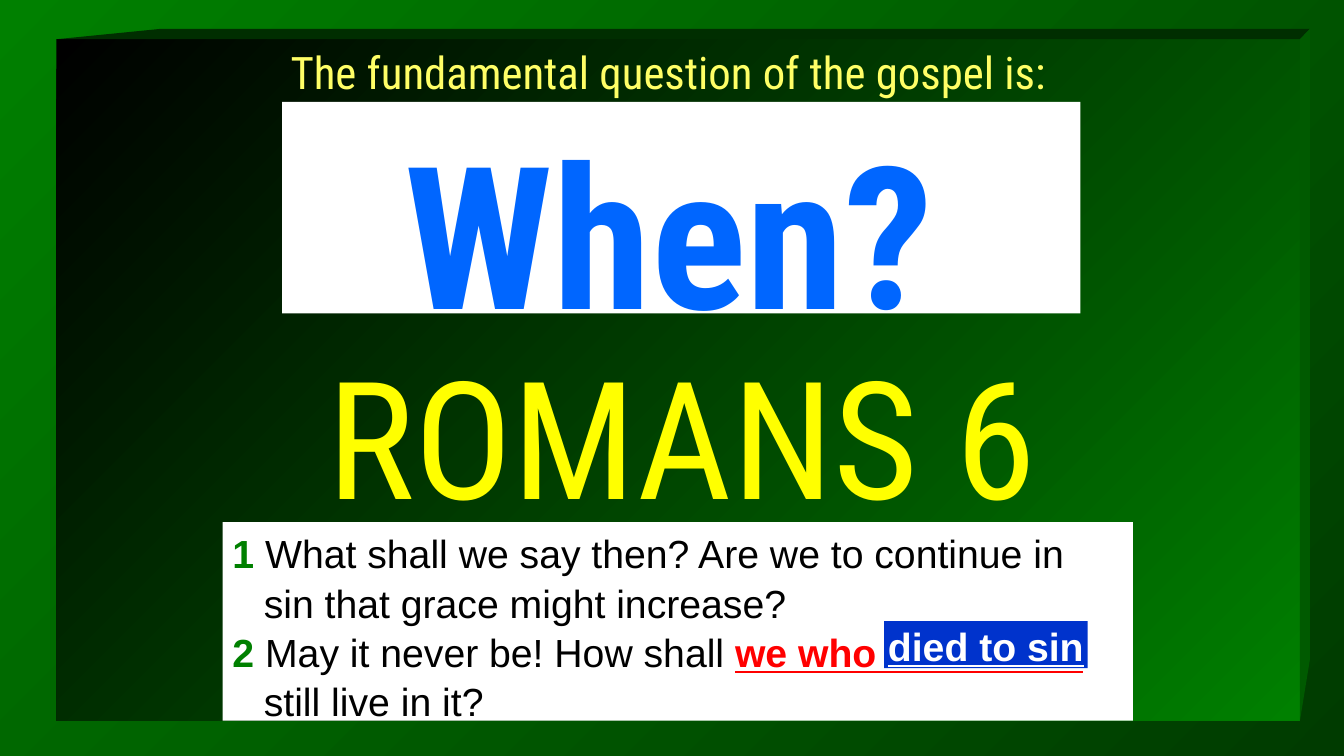
from pptx import Presentation
from pptx.dml.color import RGBColor
from pptx.enum.shapes import MSO_SHAPE
from pptx.enum.text import MSO_ANCHOR, MSO_AUTO_SIZE, PP_ALIGN
from pptx.util import Cm, Pt

COLORS = {
    "green": "008000", "dark green": "003B00", "black": "000000",
    "bevel top": "002E00", "bevel right": "005A00", "white": "FFFFFF",
    "pale yellow": "FFFF66", "yellow": "FFFF00", "blue": "0066FF",
    "deep blue": "0033CC", "red": "FF0000",
}
HEADING_FONT = "Roboto Condensed"
BODY_FONT = "Arial"
HANGING_INDENT = Cm(0.79)


def color(name):
    """Return the named colour."""
    return RGBColor.from_string(COLORS[name])


def fill_gradient(fill, start, end):
    """Apply a gradient running from top left to bottom right."""
    fill.gradient()
    fill.gradient_angle = 315
    for stop, name in zip(fill.gradient_stops, (start, end)):
        stop.color.rgb = color(name)


def fill_plain(shape, name):
    """Give a shape a solid fill without line or shadow."""
    shape.shadow.inherit = False
    shape.line.fill.background()
    shape.fill.solid()
    shape.fill.fore_color.rgb = color(name)


def add_box(slide, name, left, top, width, height):
    """Add a plain filled rectangle, measured in centimetres."""
    shape = slide.shapes.add_shape(
        MSO_SHAPE.RECTANGLE, Cm(left), Cm(top), Cm(width), Cm(height))
    fill_plain(shape, name)
    return shape


def add_bevel(slide, name, points):
    """Add one bevelled side of the panel."""
    corners = [(Cm(x), Cm(y)) for x, y in points]
    builder = slide.shapes.build_freeform(*corners[0])
    builder.add_line_segments(corners[1:], close=True)
    fill_plain(builder.convert_to_shape(), name)


def add_panel(slide):
    """Add the bevelled gradient panel behind the text."""
    panel = add_box(slide, "black", 1.42, 0.99, 31.34, 17.17)
    fill_gradient(panel.fill, "black", "green")
    add_bevel(slide, "bevel top",
              [(1.42, 0.99), (4.03, 0.73), (33.01, 0.73), (32.76, 0.99)])
    add_bevel(slide, "bevel right",
              [(32.76, 0.99), (33.01, 0.73), (33.01, 16.63), (32.76, 18.16)])


def set_frame(shape, wrap=True, anchor=MSO_ANCHOR.TOP,
              auto_size=MSO_AUTO_SIZE.SHAPE_TO_FIT_TEXT):
    """Set the text behaviour of a shape and return its first paragraph."""
    frame = shape.text_frame
    frame.word_wrap = wrap
    frame.vertical_anchor = anchor
    frame.auto_size = auto_size
    return frame.paragraphs[0]


def format_paragraph(paragraph, align=PP_ALIGN.CENTER):
    """Set the alignment and spacing of a paragraph."""
    paragraph.alignment = align
    paragraph.line_spacing = 1.05
    paragraph.space_before = Pt(0)


def add_text(paragraph, text, size=28, font=BODY_FONT, fill="black",
             bold=False, underline=False):
    """Add a formatted run to a paragraph."""
    run = paragraph.add_run()
    run.text = text
    run.font.size = Pt(size)
    run.font.name = font
    run.font.color.rgb = color(fill)
    run.font.bold = bold
    run.font.underline = underline


def add_question(slide):
    """Add the question on its white card."""
    add_box(slide, "white", 7.11, 2.57, 20.12, 5.33)
    box = slide.shapes.add_textbox(Cm(5.64), Cm(0.94), Cm(22.43), Cm(7.62))
    lead = set_frame(box)
    format_paragraph(lead)
    add_text(lead, "The fundamental question of the gospel is:",
             size=32, font=HEADING_FONT, fill="pale yellow")
    question = box.text_frame.add_paragraph()
    format_paragraph(question)
    add_text(question, "When?", size=142, font=HEADING_FONT, fill="blue", bold=True)


def place_title(slide, text):
    """Move the title placeholder to the front and format it."""
    title = slide.shapes.title
    title.element.getparent().append(title.element)
    title.left, title.top = Cm(5.44), Cm(8.08)
    title.width, title.height = Cm(23.52), Cm(5.21)
    paragraph = set_frame(title)
    format_paragraph(paragraph)
    add_text(paragraph, text, size=117, font=HEADING_FONT, fill="yellow")


def add_verses(slide, verses):
    """Add the numbered verses with hanging indents."""
    box = add_box(slide, "white", 5.61, 13.16, 22.94, 5)
    paragraph = set_frame(box)
    for number, parts in enumerate(verses, start=1):
        if number > 1:
            paragraph = box.text_frame.add_paragraph()
        format_paragraph(paragraph, align=PP_ALIGN.LEFT)
        properties = paragraph._p.get_or_add_pPr()
        properties.set("marL", str(HANGING_INDENT))
        properties.set("indent", str(-HANGING_INDENT))
        add_text(paragraph, str(number), fill="green", bold=True)
        for text, style in parts:
            add_text(paragraph, text, **style)


def add_highlight(slide, text):
    """Add the blue highlight over the key phrase."""
    box = add_box(slide, "deep blue", 22.28, 15.65, 5.13, 1.19)
    paragraph = set_frame(box, wrap=False, anchor=MSO_ANCHOR.MIDDLE,
                          auto_size=MSO_AUTO_SIZE.NONE)
    format_paragraph(paragraph)
    add_text(paragraph, text, fill="white", bold=True, underline=True)


def main():
    """Build and save the slide."""
    presentation = Presentation()
    presentation.slide_width, presentation.slide_height = Cm(33.87), Cm(19.05)
    slide = presentation.slides.add_slide(presentation.slide_layouts[5])
    fill_gradient(slide.background.fill, "green", "dark green")
    add_panel(slide)
    add_question(slide)
    place_title(slide, "ROMANS 6")
    emphasis = {"fill": "red", "bold": True, "underline": True}
    add_verses(slide, [
        [(" What shall we say then? Are we to continue in sin that grace might increase?", {})],
        [(" May it never be! How shall ", {}),
         ("we who died to sin", emphasis),
         (" still live in it?", {})],
    ])
    add_highlight(slide, "died to sin")
    presentation.save("out.pptx")


if __name__ == "__main__":
    main()
